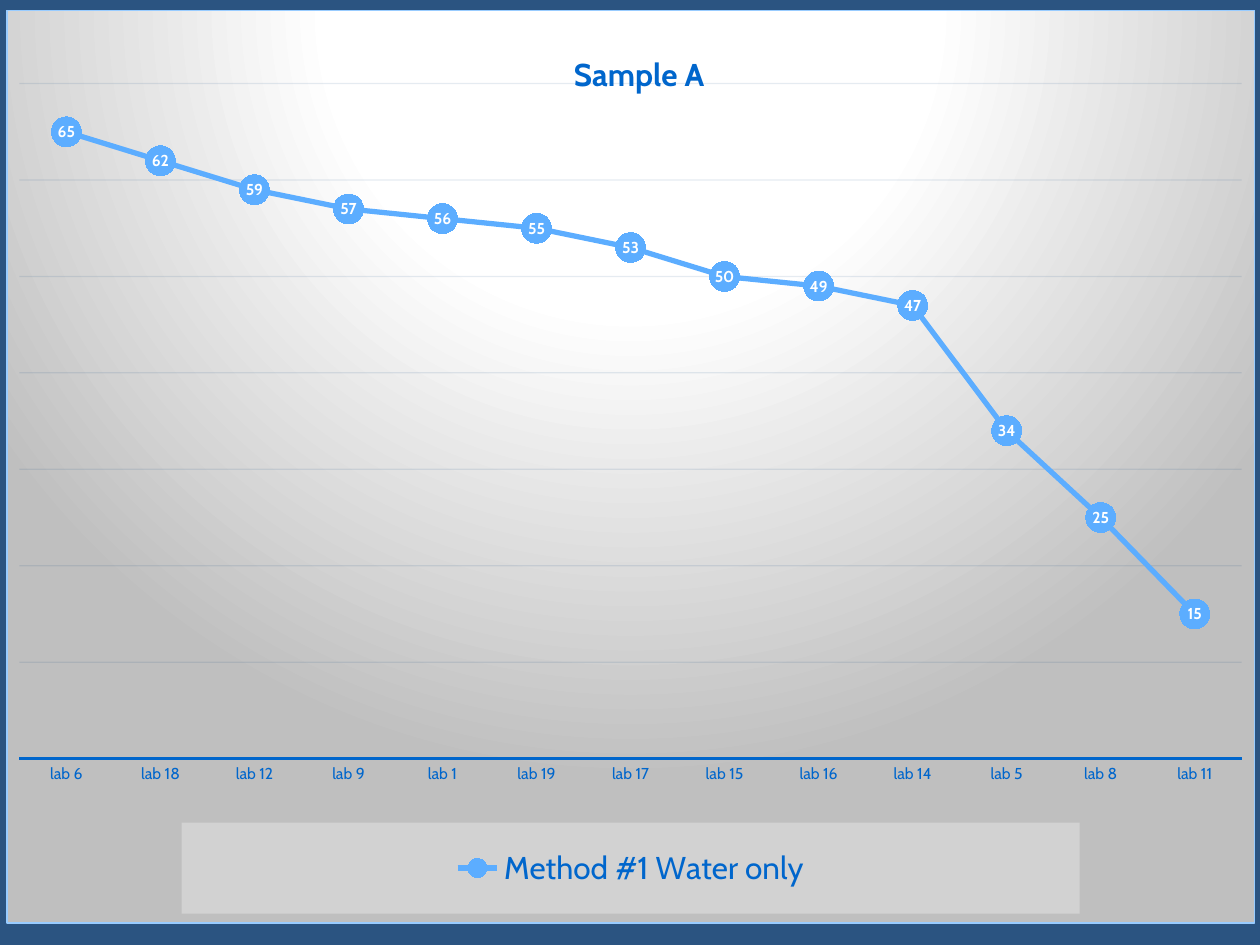
from dataclasses import dataclass
from typing import Any, NamedTuple

import pptx
import pptx.chart.data
import pptx.dml.color
import pptx.enum.chart
import pptx.oxml
import pptx.oxml.ns
import pptx.util

Inches = pptx.util.Inches
Pt = pptx.util.Pt
qn = pptx.oxml.ns.qn


@dataclass(frozen=True)
class Theme:
    face: str = "Cabin"
    back: str = "2B5481"
    text: str = "0066CC"
    line: str = "5CADFF"
    grid: str = "003D7A"
    edge: str = "99CCFF"
    panel: str = "F2F2F2"
    white: str = "FFFFFF"
    grey: str = "BFBFBF"
    large: int = 18
    base: int = 10
    small: int = 9


class Place(NamedTuple):
    """Position, and if given size, as fractions of the chart."""
    x: float
    y: float
    w: float | None = None
    h: float | None = None


class Reading(NamedTuple):
    lab: str
    value: int


THEME = Theme()
READINGS = [
    Reading("lab 6", 65), Reading("lab 18", 62), Reading("lab 12", 59),
    Reading("lab 9", 57), Reading("lab 1", 56), Reading("lab 19", 55),
    Reading("lab 17", 53), Reading("lab 15", 50), Reading("lab 16", 49),
    Reading("lab 14", 47), Reading("lab 5", 34), Reading("lab 8", 25),
    Reading("lab 11", 15),
]


def rgb(tint: str) -> pptx.dml.color.RGBColor:
    return pptx.dml.color.RGBColor.from_string(tint)


def set_font(font: Any, size: int, tint: str, bold: bool = False) -> None:
    font.name = THEME.face
    font.size = Pt(size)
    font.bold = bold
    font.color.rgb = rgb(tint)


def put_text(frame: Any, text: str, *, size: int, tint: str,
             bold: bool = False) -> None:
    frame.text = text
    set_font(frame.paragraphs[0].runs[0].font, size, tint, bold)


def set_line(line: Any, tint: str, width: float) -> None:
    line.color.rgb = rgb(tint)
    line.width = Pt(width)


def set_fill(fill: Any, tint: str) -> None:
    fill.solid()
    fill.fore_color.rgb = rgb(tint)


def make(tag: str, body: str = "") -> Any:
    spaces = pptx.oxml.ns.nsdecls("c", "a")
    return pptx.oxml.parse_xml(f"<{tag} {spaces}>{body}</{tag}>")


def find(chart: Any, tag: str) -> Any:
    """Return the first element of the chart with this tag."""
    return next(chart.element.iter(qn(tag)))


def set_place(part: Any, index: int, place: Place, inner: bool = False) -> None:
    """Give a chart part a fixed layout, as its child number index."""
    for old in part.findall(qn("c:layout")):
        part.remove(old)
    body = '<c:layoutTarget val="inner"/>' if inner else ""
    body += '<c:xMode val="edge"/><c:yMode val="edge"/>'
    body += "".join(f'<c:{key} val="{value}"/>'
                    for key, value in place._asdict().items()
                    if value is not None)
    layout = make("c:layout", f"<c:manualLayout>{body}</c:manualLayout>")
    part.insert(index, layout)


def set_back(chart: Any) -> None:
    stops = [(0, THEME.white), (39, THEME.white), (100, THEME.grey)]
    marks = "".join(
        f'<a:gs pos="{spot * 1000}"><a:srgbClr val="{tint}"/></a:gs>'
        for spot, tint in stops)
    panel = make("c:spPr", f"""
        <a:gradFill><a:gsLst>{marks}</a:gsLst><a:path path="circle">
        <a:fillToRect l="50000" t="-80000" r="50000" b="180000"/></a:path>
        </a:gradFill><a:ln w="{Pt(0.75)}"><a:solidFill>
        <a:srgbClr val="{THEME.edge}"/></a:solidFill></a:ln>""")
    find(chart, "c:chart").addnext(panel)


def set_axes(chart: Any) -> None:
    none = pptx.enum.chart.XL_TICK_MARK.NONE
    labs = chart.category_axis
    labs.major_tick_mark = labs.minor_tick_mark = none
    labs.has_major_gridlines = False
    set_font(labs.tick_labels.font, THEME.small, THEME.text)
    set_line(labs.format.line, THEME.text, 1.5)

    scale = chart.value_axis
    scale.minimum_scale, scale.maximum_scale, scale.major_unit = 0, 70, 10
    scale.visible = False
    scale.has_major_gridlines = True
    set_line(scale.major_gridlines.format.line, THEME.grid, 0.75)
    alpha = make("a:alpha")
    alpha.set("val", "10000")
    next(find(chart, "c:majorGridlines").iter(qn("a:srgbClr"))).append(alpha)


def set_series(chart: Any) -> None:
    plot = chart.plots[0]
    plot.vary_by_categories = False
    series = plot.series[0]
    series.smooth = False
    set_line(series.format.line, THEME.line, 3)
    marker = series.marker
    marker.style = pptx.enum.chart.XL_MARKER_STYLE.CIRCLE
    marker.size = 17
    set_fill(marker.format.fill, THEME.line)
    marker.format.line.fill.background()

    labels = series.data_labels
    labels.show_value = True
    labels.position = pptx.enum.chart.XL_LABEL_POSITION.CENTER
    set_font(labels.font, THEME.small, THEME.white, True)


def set_legend(chart: Any) -> None:
    chart.has_legend = True
    legend = chart.legend
    legend.position = pptx.enum.chart.XL_LEGEND_POSITION.BOTTOM
    legend.include_in_layout = False
    set_font(legend.font, THEME.large, THEME.text)
    part = find(chart, "c:legend")
    set_place(part, 1, Place(0.14, 0.89, 0.72, 0.1))
    panel = make("c:spPr", f"""<a:solidFill><a:srgbClr val="{THEME.panel}">
        <a:alpha val="39000"/></a:srgbClr></a:solidFill>""")
    part.find(qn("c:txPr")).addprevious(panel)


def add_chart(slide: Any) -> None:
    data = pptx.chart.data.CategoryChartData()
    data.categories = [item.lab for item in READINGS]
    data.add_series("Method #1 Water only", [item.value for item in READINGS])
    chart = slide.shapes.add_chart(
        pptx.enum.chart.XL_CHART_TYPE.LINE_MARKERS, Inches(0.05), Inches(0.08),
        Inches(9.91), Inches(7.25), data).chart
    set_font(chart.font, THEME.base, THEME.white)
    chart.has_title = True
    put_text(chart.chart_title.text_frame, "Sample A", size=THEME.large,
             tint=THEME.text, bold=True)
    set_place(find(chart, "c:title"), 1, Place(0.45, 0.04))
    set_axes(chart)
    set_series(chart)
    set_legend(chart)
    set_place(find(chart, "c:plotArea"), 0, Place(0.01, 0.08, 0.98, 0.74),
              inner=True)
    set_back(chart)


def main() -> None:
    deck = pptx.Presentation()
    deck.slide_width, deck.slide_height = Inches(10), Inches(7.5)
    slide = deck.slides.add_slide(deck.slide_layouts[6])
    set_fill(slide.background.fill, THEME.back)
    add_chart(slide)
    deck.save("out.pptx")


if __name__ == "__main__":
    main()
